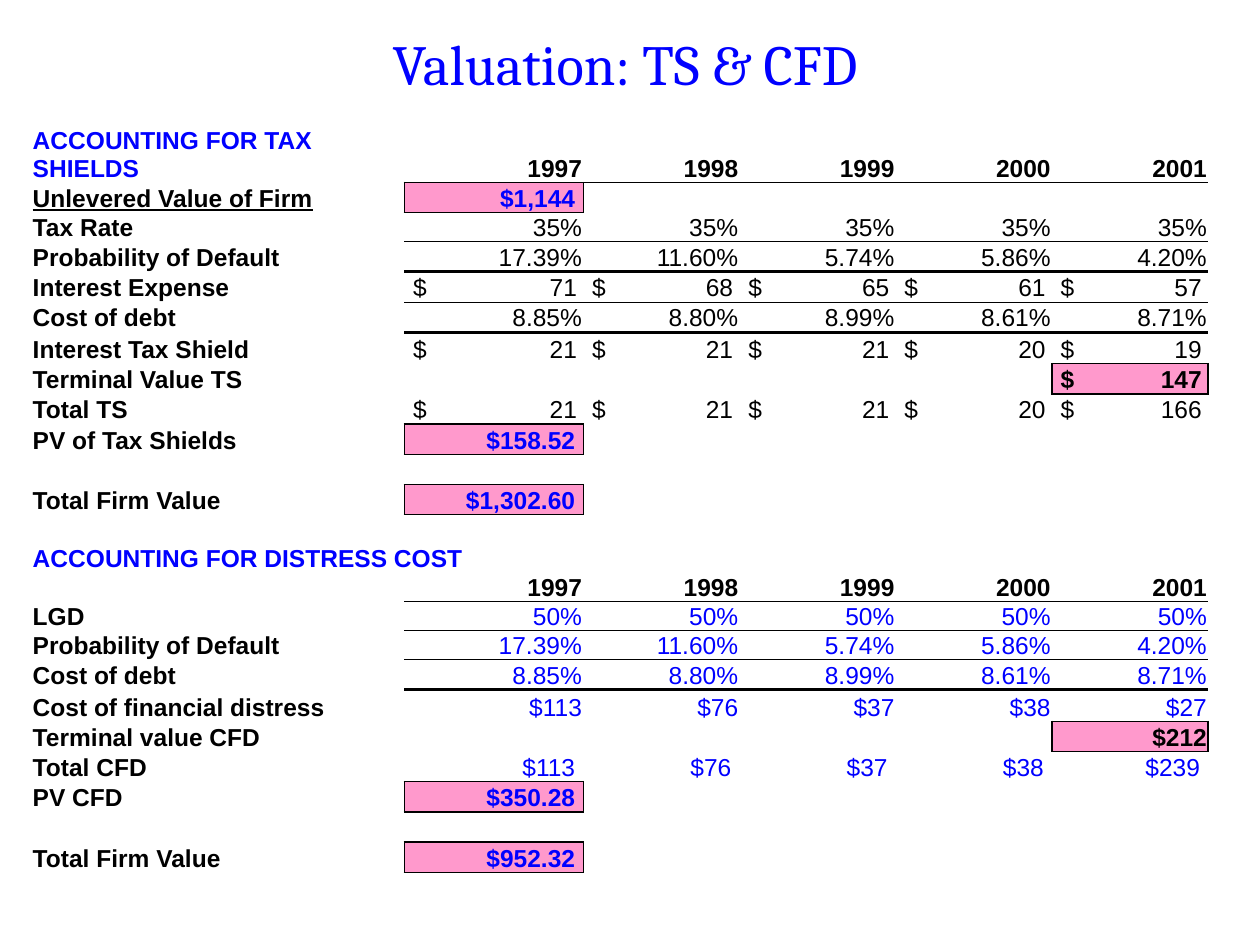
import dataclasses
import typing

import pptx
import pptx.dml.color
import pptx.enum.text
import pptx.oxml
import pptx.oxml.ns
import pptx.util

Inches = pptx.util.Inches
Pt = pptx.util.Pt
RGB = pptx.dml.color.RGBColor
ALIGN = pptx.enum.text.PP_ALIGN
ANCHOR = pptx.enum.text.MSO_ANCHOR

COLORS = {"black": "000000", "blue": "0000FF", "pink": "FF99CC"}
COL_WIDTHS = [2.82, 0.14, 1.42, 1.24, 1.24, 1.24, 1.24]
FIRST_YEAR_COL = 2
LAST_YEAR = 4
NO_STYLE = "{2D5ABB26-0587-4C30-8999-92F81FD0307C}"
SIDES = {"L": (0, -1, "R"), "R": (0, 1, "L"), "T": (-1, 0, "B"), "B": (1, 0, "T")}
ACCOUNT_INSET = 0.07
CELL_FORMAT = {"vertical_anchor": ANCHOR.BOTTOM, "margin_left": Inches(0.01),
               "margin_right": Inches(0.01), "margin_top": Inches(0.01), "margin_bottom": 0}


@dataclasses.dataclass
class Row:
    label: str = ""
    values: tuple = ()
    height: float = 0.24
    line: float = 0
    color: str = "black"
    label_color: str = "black"
    bold: bool = False
    underline: bool = False
    box: typing.Optional[int] = None


YEARS = ("1997", "1998", "1999", "2000", "2001")
DEFAULT_RISK = ("17.39%", "11.60%", "5.74%", "5.86%", "4.20%")
DEBT_COST = ("8.85%", "8.80%", "8.99%", "8.61%", "8.71%")


def total(label: str, value: str, **options) -> Row:
    return Row(label, (value,), color="blue", bold=True, box=0, **options)


def terminal(label: str, value: str) -> Row:
    return Row(label, ("",) * LAST_YEAR + (value,), bold=True, box=LAST_YEAR)


ROWS = [
    Row("ACCOUNTING FOR TAX SHIELDS", YEARS, 0.44, 0.5, label_color="blue", bold=True),
    total("Unlevered Value of Firm", "$1,144 ", underline=True),
    Row("Tax Rate", ("35%",) * 5, 0.23, 0.5),
    Row("Probability of Default", DEFAULT_RISK, line=2),
    Row("Interest Expense", ("$\t71", "$\t68", "$\t65", "$\t61", "$\t57"), line=0.5),
    Row("Cost of debt", DEBT_COST, line=2),
    Row("Interest Tax Shield", ("$\t21", "$\t21", "$\t21", "$\t20", "$\t19"), 0.25),
    terminal("Terminal Value TS", "$\t147"),
    Row("Total TS", ("$\t21", "$\t21", "$\t21", "$\t20", "$\t166")),
    total("PV of Tax Shields", "$158.52 "),
    Row(),
    total("Total Firm Value", "$1,302.60 "),
    Row(height=0.23),
    Row("ACCOUNTING FOR DISTRESS COST", height=0.23, label_color="blue"),
    Row("", YEARS, 0.23, 0.5, bold=True),
    Row("LGD", ("50%",) * 5, 0.23, 0.5, "blue"),
    Row("Probability of Default", DEFAULT_RISK, 0.23, 0.5, "blue"),
    Row("Cost of debt", DEBT_COST, line=2, color="blue"),
    Row("Cost of financial distress", ("$113", "$76", "$37", "$38", "$27"), 0.25, color="blue"),
    terminal("Terminal value CFD", "$212"),
    Row("Total CFD", ("$113 ", "$76 ", "$37 ", "$38 ", "$239 "), color="blue"),
    total("PV CFD", "$350.28 "),
    Row(),
    total("Total Firm Value", "$952.32 "),
    Row(),
]


def apply(target, values: dict) -> None:
    for name, value in values.items():
        setattr(target, name, value)


def xml(text: str):
    return pptx.oxml.parse_xml(text.replace(" ", f" {pptx.oxml.ns.nsdecls('a')} ", 1))


def write(p, text: str, color: str, **font) -> None:
    r = p.add_run()
    r.text = text
    apply(r.font, {"name": "Arial", "size": Pt(14), **font})
    r.font.color.rgb = RGB.from_string(COLORS[color])


def write_value(cell, row: Row, text: str, width: float) -> None:
    p = cell.text_frame.paragraphs[0]
    p.alignment = ALIGN.RIGHT
    if "\t" in text:
        p.alignment = ALIGN.LEFT
        cell.margin_left = Inches(ACCOUNT_INSET)
        stop = Inches(width - 2 * ACCOUNT_INSET + 0.02)
        p._p.get_or_add_pPr().append(
            xml(f'<a:tabLst ><a:tab pos="{stop}" algn="r"/></a:tabLst>'))
    write(p, text, row.color, bold=row.bold)


def collect_borders() -> dict:
    borders = {}

    def add(i: int, col: int, side: str, weight: float) -> None:
        di, dcol, opposite = SIDES[side]
        borders.setdefault((i, col), {})[side] = weight
        borders.setdefault((i + di, col + dcol), {})[opposite] = weight

    for i, row in enumerate(ROWS):
        if row.line:
            for col in range(FIRST_YEAR_COL, len(COL_WIDTHS)):
                add(i, col, "B", row.line)
        if row.box is not None:
            for side in SIDES:
                add(i, FIRST_YEAR_COL + row.box, side, 1)
    return borders


def draw_borders(cell, sides: dict) -> None:
    tcPr = cell._tc.get_or_add_tcPr()
    for side in SIDES:
        weight = sides.get(side, 0)
        paint = (f'<a:solidFill><a:srgbClr val="{COLORS["black"]}"/></a:solidFill>'
                 if weight else "<a:noFill/>")
        tcPr.append(xml(f'<a:ln{side} w="{Pt(weight)}">{paint}</a:ln{side}>'))


def draw_table(slide) -> None:
    frame = slide.shapes.add_table(
        len(ROWS), len(COL_WIDTHS), Inches(0.25), Inches(1),
        Inches(sum(COL_WIDTHS)), Inches(sum(row.height for row in ROWS)))
    table = frame.table
    apply(table, {"first_row": False, "horz_banding": False})
    table._tbl.tblPr.find(pptx.oxml.ns.qn("a:tableStyleId")).text = NO_STYLE
    for column, width in zip(table.columns, COL_WIDTHS):
        column.width = Inches(width)
    borders = collect_borders()
    for i, row in enumerate(ROWS):
        table.rows[i].height = Inches(row.height)
        for col, width in enumerate(COL_WIDTHS):
            cell = table.cell(i, col)
            apply(cell, CELL_FORMAT)
            draw_borders(cell, borders.get((i, col), {}))
            year = col - FIRST_YEAR_COL
            if row.box == year:
                cell.fill.solid()
                cell.fill.fore_color.rgb = RGB.from_string(COLORS["pink"])
            else:
                cell.fill.background()
            p = cell.text_frame.paragraphs[0]
            if col == 0 and row.label:
                write(p, row.label, row.label_color, bold=True, underline=row.underline)
            elif 0 <= year < len(row.values) and row.values[year]:
                write_value(cell, row, row.values[year], width)
            else:
                p._p.append(xml(
                    '<a:endParaRPr sz="1400"><a:latin typeface="Arial"/></a:endParaRPr>'))
        if row.label and row.label_color == "blue" and not row.values:
            table.cell(i, 0).merge(table.cell(i, FIRST_YEAR_COL))


def draw_title(slide) -> None:
    sp = slide.shapes.title
    apply(sp, {"left": Inches(0.25), "top": Inches(0.33),
               "width": Inches(9.42), "height": Inches(0.5)})
    tf = sp.text_frame
    apply(tf, {"vertical_anchor": ANCHOR.BOTTOM, "word_wrap": True,
               "auto_size": pptx.enum.text.MSO_AUTO_SIZE.NONE,
               "margin_left": Inches(0.12), "margin_right": Inches(0.12),
               "margin_top": Inches(0.06), "margin_bottom": Inches(0.06)})
    p = tf.paragraphs[0]
    p.alignment = ALIGN.CENTER
    write(p, "Valuation: TS & CFD", "blue", name="Cambria", size=Pt(32.4))


def main() -> None:
    prs = pptx.Presentation()
    apply(prs, {"slide_width": Inches(10), "slide_height": Inches(7.5)})
    slide = prs.slides.add_slide(prs.slide_layouts[5])
    draw_title(slide)
    draw_table(slide)
    prs.save("out.pptx")


if __name__ == "__main__":
    main()
